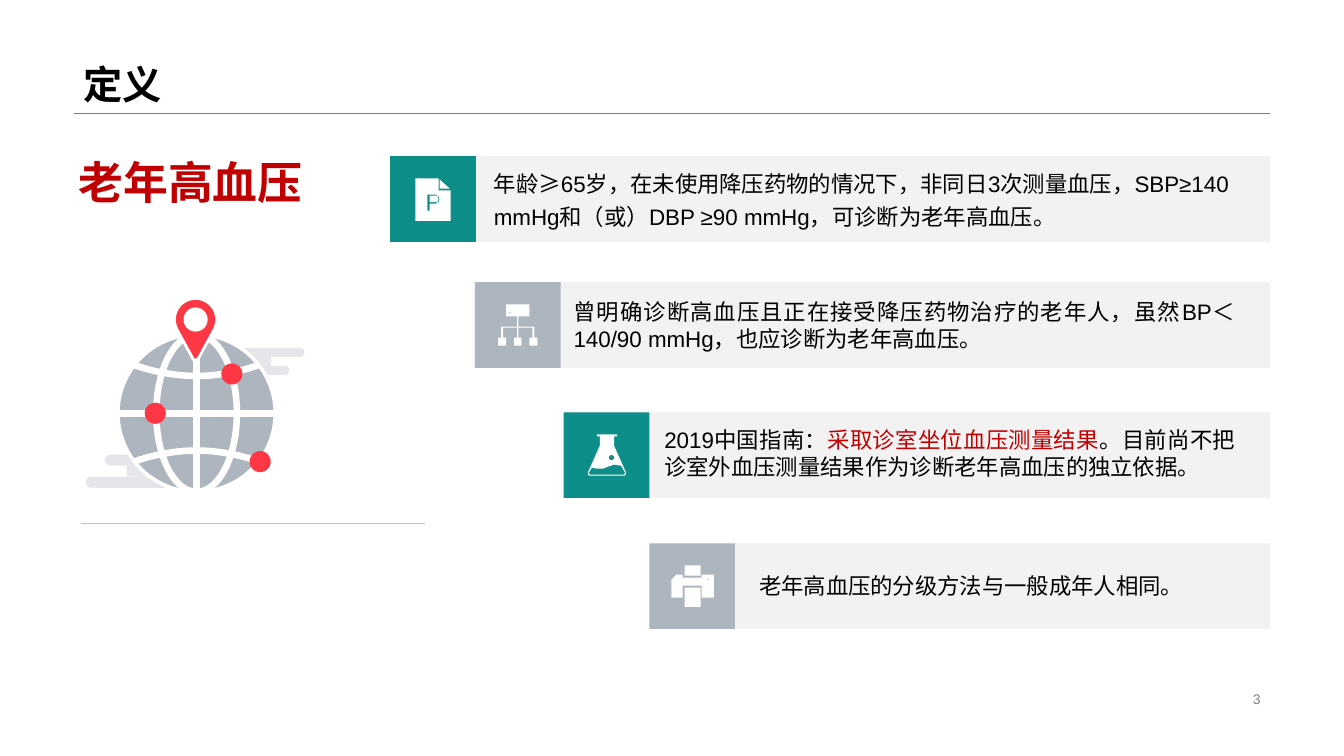
from math import cos, radians, sin

from lxml import etree
from pptx import Presentation
from pptx.dml.color import RGBColor
from pptx.enum.shapes import MSO_CONNECTOR, MSO_SHAPE as SHAPE
from pptx.enum.text import MSO_ANCHOR as ANCHOR, PP_ALIGN as ALIGN
from pptx.oxml.ns import qn
from pptx.util import Inches, Pt

COLORS = {
    "black": "000000", "white": "FFFFFF", "gray": "808080", "rule": "BFBFBF",
    "panel": "F2F2F2", "teal": "0E8E88", "slate": "ADB5BF", "cloud": "E4E6EA",
    "red": "C00000", "pin": "FE3745",
}
rgb = {name: RGBColor.from_string(value) for name, value in COLORS.items()}

prs = Presentation()
prs.slide_width, prs.slide_height = Inches(13.33), Inches(7.5)
s = prs.slides.add_slide(prs.slide_layouts[6])


def paint(sp, fill=None, line=None, width=1):
    """Set fill and outline by colour name; None leaves the part empty."""
    sp.shadow.inherit = False
    for part, color in ((sp.fill, fill), (sp.line.fill, line)):
        if color:
            part.solid()
            part.fore_color.rgb = rgb[color]
        else:
            part.background()
    if line:
        sp.line.width = Pt(width)
    return sp


def outline(contours, x=0, y=0, closed=True):
    """Build one freeform from lists of points in inches, offset by x and y."""
    contours = [[(round(px * 1000), round(py * 1000)) for px, py in c] for c in contours]
    fb = s.shapes.build_freeform(*contours[0][0], scale=Inches(1) / 1000)
    for i, points in enumerate(contours):
        if i:
            fb.move_to(*points[0])
        fb.add_line_segments(points[1:], close=closed)
    return fb.convert_to_shape(Inches(x), Inches(y))


# Staircase of panels, each with an icon tile
SIDE, RIGHT = 0.85, 12.6
page_icon = [
    [(.48, .22), (.48, .34), (.6, .34), (.6, .64), (.25, .64), (.25, .22)],
    [(.45, .38), (.37, .38), (.37, .54), (.39, .54), (.39, .47), (.45, .47),
     (.48, .45), (.49, .43), (.48, .4)],
    [(.45, .39), (.47, .4), (.48, .43), (.47, .45), (.45, .455), (.39, .455), (.39, .39)],
    [(.59, .32), (.49, .32), (.49, .23)],
]
tree_icon = [
    [(.54, .22), (.54, .34), (.43, .34), (.43, .44), (.59, .44), (.59, .55),
     (.62, .55), (.62, .63), (.54, .63), (.54, .55), (.57, .55), (.57, .45),
     (.43, .45), (.43, .55), (.46, .55), (.46, .63), (.39, .63), (.39, .55),
     (.42, .55), (.42, .45), (.28, .45), (.28, .55), (.31, .55), (.31, .63),
     (.23, .63), (.23, .55), (.26, .55), (.26, .44), (.42, .44), (.42, .34),
     (.31, .34), (.31, .22)],
    [(.35, .29), (.34, .3), (.35, .31), (.36, .3)],
]
flask_icon = [
    [(.53, .22), (.53, .24), (.5, .24), (.5, .33), (.62, .6), (.61, .63),
     (.25, .63), (.24, .6), (.36, .33), (.36, .24), (.33, .24), (.33, .22)],
    [(.44, .54), (.39, .56), (.33, .56), (.28, .55), (.25, .6), (.26, .62),
     (.6, .62), (.61, .6), (.57, .53), (.5, .52)],
    [(.475 + .027 * cos(radians(a)), .45 + .027 * sin(radians(a)))
     for a in range(0, 360, 30)],
]
printer_icon = [
    [(.51, .44), (.51, .63), (.35, .63), (.35, .44)],
    [(.33, .31), (.33, .34), (.52, .34), (.52, .31), (.64, .31), (.64, .54),
     (.52, .54), (.52, .42), (.33, .42), (.33, .54), (.22, .54), (.22, .36), (.27, .31)],
    [(.58, .35), (.57, .36), (.58, .37), (.59, .36)],
    [(.51, .22), (.51, .32), (.35, .32), (.35, .22)],
]
panels = [
    (3.87, 1.55, "teal", page_icon),
    (4.71, 2.8, "slate", tree_icon),
    (5.59, 4.09, "teal", flask_icon),
    (6.44, 5.39, "slate", printer_icon),
]
for x, y, color, icon in panels:
    for width, fill in ((RIGHT - x, "panel"), (SIDE, color)):
        paint(s.shapes.add_shape(SHAPE.RECTANGLE, Inches(x), Inches(y),
                                 Inches(width), Inches(SIDE)), fill)
    paint(outline(icon, x, y), "white")

# Rules under the title and the globe
for x1, x2, y, color, width in [(0.73, RIGHT, 1.12, "gray", 0.25),
                                (0.8, 4.22, 5.19, "rule", 0.5)]:
    rule = s.shapes.add_connector(MSO_CONNECTOR.STRAIGHT, Inches(x1), Inches(y),
                                  Inches(x2), Inches(y))
    rule.line.color.rgb = rgb[color]
    rule.line.width = Pt(width)
    etree.SubElement(rule._element.spPr, qn("a:effectLst"))

# Clouds behind the globe
clouds = [
    (SHAPE.ROUNDED_RECTANGLE, 2.25, 3.45, 0.77, 0.09),
    (SHAPE.RECTANGLE, 2.4, 3.54, 0.29, 0.09),
    (SHAPE.ROUNDED_RECTANGLE, 2.5, 3.63, 0.37, 0.09),
    (SHAPE.ROUNDED_RECTANGLE, 1.04, 4.51, 0.4, 0.11),
    (SHAPE.RECTANGLE, 1.26, 4.62, 0.3, 0.11),
    (SHAPE.ROUNDED_RECTANGLE, 0.85, 4.73, 0.83, 0.11),
]
for kind, *box in clouds:
    sp = paint(s.shapes.add_shape(kind, *map(Inches, box)), "cloud")
    if kind == SHAPE.ROUNDED_RECTANGLE:
        sp.adjustments[0] = 0.5

# Globe with its meridians and parallels
CX, CY, R = 1.95, 4.1, 0.78
for half_width, fill, width in [(R, "slate", 2.5), (0.4, None, 4.7)]:
    paint(s.shapes.add_shape(SHAPE.OVAL, Inches(CX - half_width), Inches(CY - R),
                             Inches(2 * half_width), Inches(2 * R)), fill, "white", width)
steps = [i / 10 for i in range(-10, 11)]
parallels = [[(CX + 0.62 * t, CY + side * (0.37 + 0.11 * t * t)) for t in steps]
             for side in (-1, 1)]
axes = [[(CX - R, CY), (CX + R, CY)], [(CX, CY - R), (CX, CY + R)]]
for points in parallels + axes:
    paint(outline([points], closed=False), None, "white", 4.7)

# Map pin and place dots
PIN_X, PIN_Y, PIN_R = 1.94, 3.17, 0.21
pin = [(PIN_X + PIN_R * cos(radians(a)), PIN_Y + PIN_R * sin(radians(a)))
       for a in range(-210, 31, 10)]
paint(outline([pin + [(PIN_X + 0.02, 3.57), (PIN_X - 0.02, 3.57)]]), "pin", "white", 2)
for x, y, size, color in [(PIN_X, PIN_Y, 0.24, "white"), (1.54, 4.1, 0.21, "pin"),
                          (2.3, 3.71, 0.21, "pin"), (2.58, 4.58, 0.21, "pin")]:
    paint(s.shapes.add_shape(SHAPE.OVAL, Inches(x - size / 2), Inches(y - size / 2),
                             Inches(size), Inches(size)), color)

# Texts: box, size, bold, alignment, anchor, line spacing, runs
texts = [
    ((0.73, 0, 11.87, 1.12), 28, True, ALIGN.LEFT, ANCHOR.BOTTOM, 0.9,
     [("定义", "black")]),
    ((0.68, 1.48, 3.19, 0.64), 32, True, ALIGN.LEFT, ANCHOR.BOTTOM, 1,
     [("老年高血压", "red")]),
    ((4.8, 1.59, 7.66, 0.72), 16, False, ALIGN.LEFT, ANCHOR.TOP, 1.2,
     [("年龄≥65岁，在未使用降压药物的情况下，非同日3次测量血压，"
       "SBP≥140 mmHg和（或）DBP ≥90 mmHg，可诊断为老年高血压。", "black")]),
    ((5.59, 2.91, 6.76, 0.64), 16, False, ALIGN.JUSTIFY, ANCHOR.TOP, 1,
     [("曾明确诊断高血压且正在接受降压药物治疗的老年人，虽然BP＜140/90 mmHg，"
       "也应诊断为老年高血压。", "black")]),
    ((6.49, 4.18, 5.86, 0.64), 16, False, ALIGN.JUSTIFY, ANCHOR.TOP, 1,
     [("2019中国指南：", "black"), ("采取诊室坐位血压测量结果", "red"),
      ("。目前尚不把诊室外血压测量结果作为诊断老年高血压的独立依据。", "black")]),
    ((7.43, 5.63, 4.88, 0.37), 16, False, ALIGN.JUSTIFY, ANCHOR.TOP, 1,
     [("老年高血压的分级方法与一般成年人相同。", "black")]),
    ((9.42, 6.82, 3.18, 0.23), 10, False, ALIGN.RIGHT, ANCHOR.MIDDLE, 1,
     [("3", "gray")]),
]
for box, size, bold, align, anchor, spacing, runs in texts:
    tf = s.shapes.add_textbox(*map(Inches, box)).text_frame
    tf.word_wrap = True
    tf.vertical_anchor = anchor
    p = tf.paragraphs[0]
    p.alignment, p.line_spacing = align, spacing
    for text, color in runs:
        r = p.add_run()
        r.text = text
        r.font.name, r.font.size, r.font.bold = "Arial", Pt(size), bold
        r.font.color.rgb = rgb[color]

prs.save("out.pptx")
